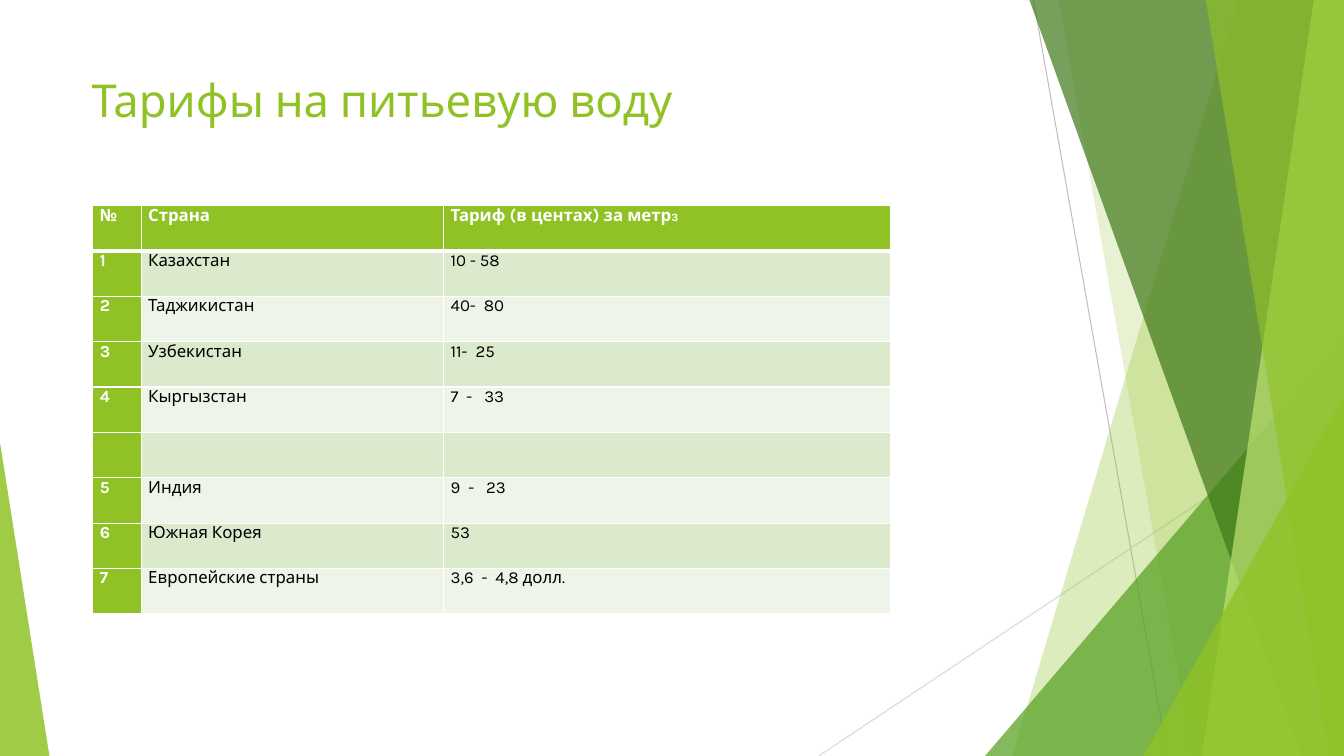
from dataclasses import dataclass

from lxml import etree
from pptx import Presentation
from pptx import util as u
from pptx.dml.color import RGBColor
from pptx.enum import shapes, text
from pptx.oxml.ns import qn


@dataclass(frozen=True)
class Theme:
    font: str = "Karla"
    green: str = "90C226"
    leaf: str = "54A021"
    forest: str = "3F7819"
    lime: str = "C0E474"
    band_dark: str = "DBE9CD"
    band_light: str = "EEF4E8"
    white: str = "FFFFFF"
    black: str = "000000"
    steep_line: str = "BFBFBF"
    slanted_line: str = "D9D9D9"
    title_size: float = 32.4
    body_size: float = 12
    small_size: float = 8


THEME = Theme()
WIDTH, HEIGHT = 13.33, 7.5
COLUMN_WIDTHS = [0.48, 3, 4.43]
ROW_HEIGHT = 0.45
TARIFFS = [
    ("1", "Казахстан", "10 - 58"),
    ("2", "Таджикистан", "40-  80"),
    ("3", "Узбекистан", "11-  25"),
    ("4", "Кыргызстан", "7  -   33"),
    ("", "", ""),
    ("5", "Индия", "9  -   23"),
    ("6", "Южная Корея", "53"),
    ("7", "Европейские страны", "3,6  -  4,8 долл."),
]


def paint(shape, color, opacity):
    """Fill a shape with a translucent colour, without outline or shadow."""
    shape.shadow.inherit = False
    shape.line.fill.background()
    shape.fill.solid()
    shape.fill.fore_color.rgb = RGBColor.from_string(color)
    tint = shape.fill._xPr.find(".//" + qn("a:srgbClr"))
    etree.SubElement(tint, qn("a:alpha")).set("val", str(opacity * 1000))


def add_line(page, start, end, color):
    ends = [u.Inches(value) for value in (*start, *end)]
    line = page.shapes.add_connector(shapes.MSO_CONNECTOR.STRAIGHT, *ends)
    line.line.color.rgb = RGBColor.from_string(color)
    line.line.width = u.Pt(0.75)
    etree.SubElement(line._element.spPr, qn("a:effectLst"))


def add_facet(page, top_x, bottom_x, color, opacity):
    """Draw a full-height panel from a slanted edge to the right slide edge."""
    corners = [(WIDTH, 0), (WIDTH, HEIGHT), (bottom_x, HEIGHT)]
    builder = page.shapes.build_freeform(u.Inches(top_x), 0)
    builder.add_line_segments([(u.Inches(x), u.Inches(y)) for x, y in corners])
    paint(builder.convert_to_shape(), color, opacity)


def add_corner(page, left, top, width, apex, color, opacity):
    """Draw a triangle standing on the bottom edge of the slide."""
    corner = page.shapes.add_shape(
        shapes.MSO_SHAPE.ISOSCELES_TRIANGLE,
        u.Inches(left), u.Inches(top), u.Inches(width), u.Inches(HEIGHT - top))
    corner.adjustments[0] = apex
    paint(corner, color, opacity)


def add_span(para, words, size, color, bold=False):
    span = para.add_run()
    span.text = words
    span.font.name = THEME.font
    span.font.size = u.Pt(size)
    span.font.bold = bold
    span.font.color.rgb = RGBColor.from_string(color)


def add_decoration(page):
    add_line(page, (10.25, 0), (11.58, HEIGHT), THEME.steep_line)
    add_line(page, (WIDTH, 4.03), (8.12, HEIGHT), THEME.slanted_line)
    add_facet(page, 12.28, 10.04, THEME.green, 30)
    add_facet(page, 10.5, 11.83, THEME.green, 20)
    add_corner(page, 9.77, 3.33, 3.56, 1, THEME.leaf, 72)
    add_facet(page, 10.21, 12.91, THEME.forest, 70)
    add_facet(page, 13.03, 11.92, THEME.lime, 70)
    add_facet(page, 11.96, 13.18, THEME.green, 65)
    add_corner(page, 11.34, 3.93, 1.99, 1, THEME.green, 80)
    add_corner(page, 0, 4.39, 0.49, 0, THEME.green, 85)


def set_title(page, words):
    title = page.shapes.title
    title.left, title.top = u.Inches(0.81), u.Inches(0.67)
    title.width, title.height = u.Inches(9.33), u.Inches(0.7)
    frame = title.text_frame
    frame.word_wrap = True
    frame.auto_size = text.MSO_AUTO_SIZE.NONE
    frame.vertical_anchor = text.MSO_ANCHOR.TOP
    para = frame.paragraphs[0]
    para.alignment = text.PP_ALIGN.LEFT
    add_span(para, words, THEME.title_size, THEME.green)


def add_borders(cell, top=1, bottom=1):
    widths = {"a:lnL": 1, "a:lnR": 1, "a:lnT": top, "a:lnB": bottom}
    properties = cell._tc.get_or_add_tcPr()
    for side, width in widths.items():
        border = etree.SubElement(properties, qn(side), w=str(u.Pt(width)))
        fill = etree.SubElement(border, qn("a:solidFill"))
        etree.SubElement(fill, qn("a:srgbClr"), val=THEME.white)


def fill_cell(cell, words, fill, color, bold):
    cell.margin_left = cell.margin_right = u.Inches(0.07)
    cell.margin_top = cell.margin_bottom = 0
    cell.fill.solid()
    cell.fill.fore_color.rgb = RGBColor.from_string(fill)
    para = cell.text_frame.paragraphs[0]
    para.alignment = text.PP_ALIGN.JUSTIFY
    para.space_after = u.Pt(8)
    if words:
        add_span(para, words, THEME.body_size, color, bold)
    return para


def add_tariff_table(page):
    rows = [("№", "Страна", "Тариф (в центах) за метр"), *TARIFFS]
    table = page.shapes.add_table(
        len(rows), len(COLUMN_WIDTHS), u.Inches(0.92), u.Inches(2.04),
        u.Inches(sum(COLUMN_WIDTHS)), u.Inches(ROW_HEIGHT * len(rows))).table
    table.first_col = True
    for column, width in zip(table.columns, COLUMN_WIDTHS):
        column.width = u.Inches(width)
    for r, row in enumerate(rows):
        table.rows[r].height = u.Inches(ROW_HEIGHT)
        band = THEME.band_dark if r % 2 else THEME.band_light
        for c, words in enumerate(row):
            cell = table.cell(r, c)
            add_borders(cell, top=3 if r == 1 else 1, bottom=3 if r == 0 else 1)
            heading = r == 0 or c == 0
            para = fill_cell(cell, words, THEME.green if heading else band,
                             THEME.white if heading else THEME.black, heading)
            if r == 0 and c == 2:
                add_span(para, "3", THEME.small_size, THEME.white, True)


def main():
    deck = Presentation()
    deck.slide_width, deck.slide_height = u.Inches(WIDTH), u.Inches(HEIGHT)
    page = deck.slides.add_slide(deck.slide_layouts.get_by_name("Title Only"))
    page.background.fill.solid()
    page.background.fill.fore_color.rgb = RGBColor.from_string(THEME.white)
    add_decoration(page)
    set_title(page, "Тарифы на питьевую воду")
    add_tariff_table(page)
    deck.save("out.pptx")


if __name__ == "__main__":
    main()
